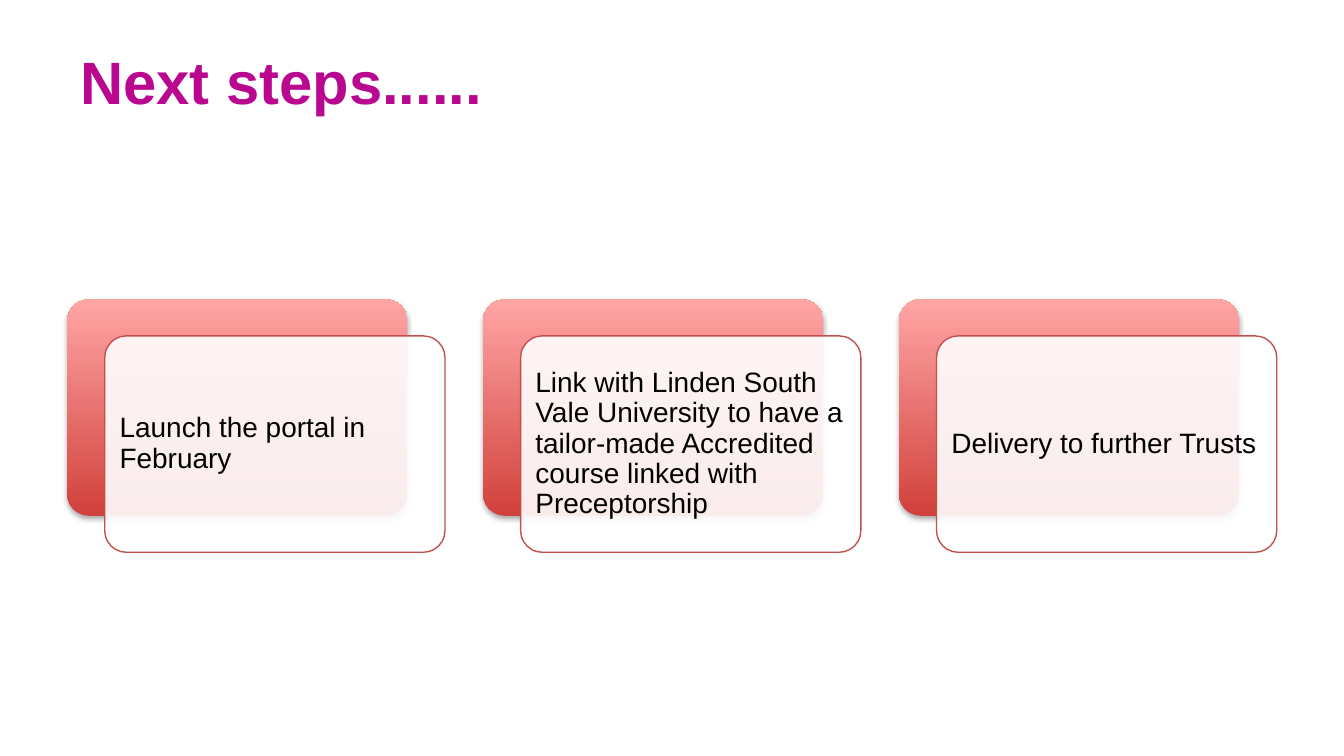
from dataclasses import dataclass

import lxml.etree
import pptx
import pptx.dml.color
import pptx.enum.shapes
import pptx.enum.text
import pptx.oxml
import pptx.oxml.ns
import pptx.util
from pptx.dml.color import RGBColor
from pptx.util import Cm

MAGENTA = RGBColor(0xBA, 0x07, 0x90)
DARK_RED = RGBColor(0xD1, 0x40, 0x3C)
LIGHT_RED = RGBColor(0xFF, 0xA6, 0xA5)
BORDER_RED = RGBColor(0xC0, 0x50, 0x4D)
WHITE = RGBColor(0xFF, 0xFF, 0xFF)
BLACK = RGBColor(0x00, 0x00, 0x00)

FONT = "Arial"
CORNER = 0.1
CARD_PITCH = 7.86
PANEL_SHIFT_X, PANEL_SHIFT_Y = 0.71, 0.69
TEXT_MARGIN = 0.12

STEPS = (
    "Launch the portal in February",
    "Link with Linden South Vale University to have a tailor-made "
    "Accredited course linked with Preceptorship",
    "Delivery to further Trusts",
)


@dataclass(frozen=True)
class Box:
    """A rectangle in centimetres."""

    left: float
    top: float
    width: float
    height: float

    def shifted(self, right: float, down: float) -> "Box":
        return Box(self.left + right, self.top + down, self.width, self.height)

    def inset(self, margin: float) -> "Box":
        return Box(self.left + margin, self.top + margin,
                   self.width - 2 * margin, self.height - 2 * margin)

    def lengths(self) -> tuple[Cm, Cm, Cm, Cm]:
        return Cm(self.left), Cm(self.top), Cm(self.width), Cm(self.height)


@dataclass(frozen=True)
class TextStyle:
    size: float
    color: RGBColor
    bold: bool = False
    line_spacing: float = 1.0


TITLE_BOX = Box(1.27, 0.33, 22.86, 2.39)
FIRST_CARD = Box(1.27, 5.66, 6.43, 4.09)
TITLE_STYLE = TextStyle(32, MAGENTA, bold=True)
STEP_STYLE = TextStyle(15, BLACK, line_spacing=0.9)


def add_text(slide, box: Box, text: str, style: TextStyle,
             margin_x: float, margin_y: float) -> None:
    frame = slide.shapes.add_textbox(*box.lengths()).text_frame
    frame.word_wrap = True
    frame.vertical_anchor = pptx.enum.text.MSO_ANCHOR.MIDDLE
    frame.margin_left = frame.margin_right = Cm(margin_x)
    frame.margin_top = frame.margin_bottom = Cm(margin_y)
    frame.text = text
    paragraph = frame.paragraphs[0]
    paragraph.line_spacing = style.line_spacing
    font = paragraph.runs[0].font
    font.name = FONT
    font.size = pptx.util.Pt(style.size)
    font.bold = style.bold
    font.color.rgb = style.color


def add_rounded_box(slide, box: Box):
    shape = slide.shapes.add_shape(
        pptx.enum.shapes.MSO_SHAPE.ROUNDED_RECTANGLE, *box.lengths())
    shape.adjustments[0] = CORNER
    shape.shadow.inherit = False
    return shape


def add_drop_shadow(shape) -> None:
    effects = shape._element.spPr.find(pptx.oxml.ns.qn("a:effectLst"))
    effects.append(pptx.oxml.parse_xml(
        f'<a:outerShdw {pptx.oxml.ns.nsdecls("a")} blurRad="40000" dist="23000" '
        'dir="5400000" rotWithShape="0"><a:srgbClr val="000000">'
        '<a:alpha val="35000"/></a:srgbClr></a:outerShdw>'))


def set_opacity(shape, percent: int) -> None:
    color = shape._element.spPr.find(
        f'{pptx.oxml.ns.qn("a:solidFill")}/{pptx.oxml.ns.qn("a:srgbClr")}')
    alpha = lxml.etree.SubElement(color, pptx.oxml.ns.qn("a:alpha"))
    alpha.set("val", str(percent * 1000))


def add_step_card(slide, box: Box, text: str) -> None:
    """Draw a red card with a translucent text panel offset in front of it."""
    card = add_rounded_box(slide, box)
    card.fill.gradient()
    card.fill.gradient_angle = 90
    for stop, color in zip(card.fill.gradient_stops, (DARK_RED, LIGHT_RED)):
        stop.color.rgb = color
    card.line.fill.background()
    add_drop_shadow(card)

    panel_box = box.shifted(PANEL_SHIFT_X, PANEL_SHIFT_Y)
    panel = add_rounded_box(slide, panel_box)
    panel.fill.solid()
    panel.fill.fore_color.rgb = WHITE
    set_opacity(panel, 90)
    panel.line.color.rgb = BORDER_RED
    panel.line.width = pptx.util.Pt(0.75)

    add_text(slide, panel_box.inset(TEXT_MARGIN), text, STEP_STYLE, 0.16, 0.16)


def main() -> None:
    presentation = pptx.Presentation()
    presentation.slide_width = Cm(25.4)
    presentation.slide_height = Cm(14.29)
    slide = presentation.slides.add_slide(presentation.slide_layouts[6])

    add_text(slide, TITLE_BOX, "Next steps......", TITLE_STYLE, 0.25, 0.13)
    for index, text in enumerate(STEPS):
        add_step_card(slide, FIRST_CARD.shifted(index * CARD_PITCH, 0), text)

    presentation.save("out.pptx")


if __name__ == "__main__":
    main()
